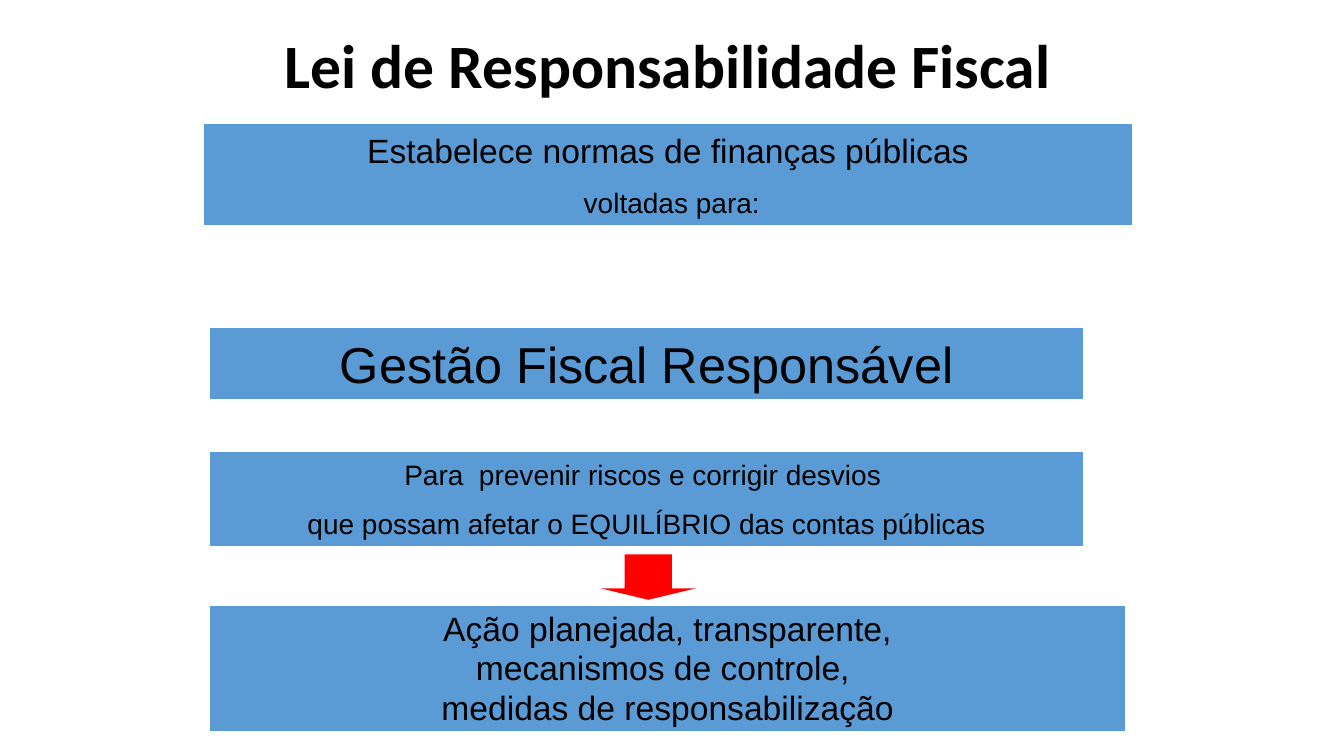
from pptx import Presentation
from pptx.dml.color import RGBColor
from pptx.enum.shapes import MSO_SHAPE
from pptx.enum.text import MSO_ANCHOR, PP_ALIGN
from pptx.util import Inches, Pt

BLACK = RGBColor(0, 0, 0)
WHITE = RGBColor(255, 255, 255)
BLUE = RGBColor(0x5B, 0x9B, 0xD5)
RED = RGBColor(255, 0, 0)


def write(frame, lines, font="Arial", bold=False, anchor=MSO_ANCHOR.MIDDLE, gap=11, pitch=None):
    """Fill a text frame with centred (text, size) paragraphs."""
    frame.word_wrap = True
    frame.vertical_anchor = anchor
    for i, (text, size) in enumerate(lines):
        para = frame.add_paragraph() if i else frame.paragraphs[0]
        para.text = text
        para.alignment = PP_ALIGN.CENTER
        para.space_before = Pt(gap if i else 0)
        if pitch:
            para.line_spacing = pitch
        for run in para.runs:
            run.font.name = font
            run.font.size = Pt(size)
            run.font.bold = bold
            run.font.color.rgb = BLACK


def title(slide, box, text):
    """Place the slide heading in the given box."""
    area = slide.shapes.add_textbox(*map(Inches, box))
    write(area.text_frame, [(text, 44)], font="Calibri", bold=True, anchor=MSO_ANCHOR.TOP)


def panel(slide, box, lines, **style):
    """Draw a blue panel with its text in the given box."""
    rect = slide.shapes.add_shape(MSO_SHAPE.RECTANGLE, *map(Inches, box))
    rect.shadow.inherit = False
    rect.fill.solid()
    rect.fill.fore_color.rgb = BLUE
    rect.line.color.rgb = WHITE
    rect.line.width = Pt(0.75)
    write(rect.text_frame, lines, **style)


def arrow(slide, box):
    """Draw the red down arrow in the given box."""
    mark = slide.shapes.add_shape(MSO_SHAPE.DOWN_ARROW, *map(Inches, box))
    mark.shadow.inherit = False
    mark.adjustments[0] = 0.5
    mark.adjustments[1] = 0.25
    mark.fill.solid()
    mark.fill.fore_color.rgb = RED
    mark.line.fill.background()


def main():
    """Build and save the slide."""
    deck = Presentation()
    deck.slide_width, deck.slide_height = Inches(13.33), Inches(7.5)
    slide = deck.slides.add_slide(deck.slide_layouts[6])
    title(slide, (1.9, 0.22, 9.46, 1.58), "Lei de Responsabilidade Fiscal")
    panel(slide, (2.02, 1.23, 9.21, 1.01),
          [("Estabelece normas de finanças públicas", 24), (" voltadas para:", 20)])
    panel(slide, (2.08, 3.25, 8.67, 0.71), [("Gestão Fiscal Responsável", 36)])
    panel(slide, (2.08, 4.48, 8.67, 0.94),
          [("Para  prevenir riscos e corrigir desvios ", 20),
           ("que possam afetar o EQUILÍBRIO das contas públicas", 20)])
    panel(slide, (2.08, 6.01, 9.08, 1.25),
          [("Ação planejada, transparente,\vmecanismos de controle, \v"
            "medidas de responsabilização", 24)], pitch=0.98)
    arrow(slide, (5.96, 5.5, 0.94, 0.45))
    deck.save("out.pptx")


if __name__ == "__main__":
    main()
